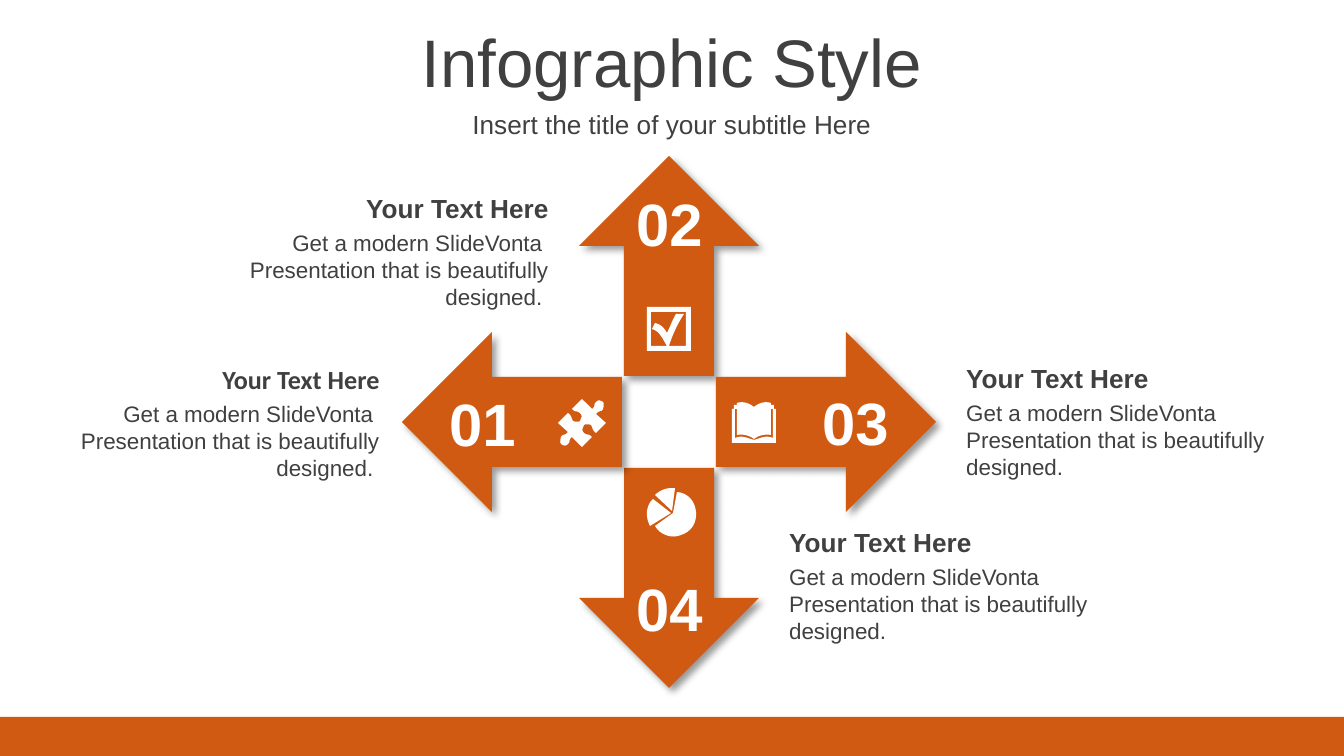
from pptx import Presentation
from pptx.dml.color import RGBColor
from pptx.enum.shapes import MSO_SHAPE
from pptx.enum.text import MSO_ANCHOR, PP_ALIGN
from pptx.oxml import parse_xml
from pptx.oxml.ns import nsdecls, qn
from pptx.util import Emu, Pt

SCALE = 914400 / 134.4
ORANGE, DARK, WHITE = "D15A12", "404040", "FFFFFF"
LEFT, CENTER, RIGHT = PP_ALIGN.LEFT, PP_ALIGN.CENTER, PP_ALIGN.RIGHT
SHADOW = (
    f'<a:effectLst {nsdecls("a")}><a:outerShdw blurRad="50800" dist="38100" '
    'dir="2700000" algn="tl" rotWithShape="0"><a:srgbClr val="000000">'
    '<a:alpha val="40000"/></a:srgbClr></a:outerShdw></a:effectLst>'
)


def px(n):
    return Emu(round(n * SCALE))


def rgb(color):
    return RGBColor.from_string(color)


def flip(outline, sx, sy):
    """Mirror the steps of an outline about the icon centre."""
    return [tuple(v * (sy if i % 2 else sx) for i, v in enumerate(step))
            for step in outline]


def flatten(outline, steps=8):
    """Turn (x, y) lines and six-number Bezier curves into points."""
    points = []
    for step in outline:
        if len(step) == 2:
            points.append(step)
            continue
        nodes = [points[-1], step[:2], step[2:4], step[4:]]
        for i in range(1, steps + 1):
            t = i / steps
            weights = ((1 - t) ** 3, 3 * t * (1 - t) ** 2, 3 * t * t * (1 - t), t ** 3)
            points.append(tuple(sum(w * n[axis] for w, n in zip(weights, nodes))
                                for axis in (0, 1)))
    return points


class Deck:
    font = "Arial"

    def __init__(self, width, height):
        self.prs = Presentation()
        self.prs.slide_width, self.prs.slide_height = px(width), px(height)
        self.s = self.prs.slides.add_slide(self.prs.slide_layouts[6])

    def paint(self, sp, color):
        sp.shadow.inherit = False
        sp.fill.solid()
        sp.fill.fore_color.rgb = rgb(color)
        sp.line.fill.background()

    def shape(self, kind, x, y, w, h, color):
        sp = self.s.shapes.add_shape(kind, px(x), px(y), px(w), px(h))
        self.paint(sp, color)
        return sp

    def arrow(self, cx, cy, rotation):
        w, h = 180, 220
        sp = self.shape(MSO_SHAPE.UP_ARROW, cx - w / 2, cy - h / 2, w, h, ORANGE)
        sp.rotation = rotation
        spPr = sp._element.spPr
        spPr.replace(spPr.find(qn("a:effectLst")), parse_xml(SHADOW))

    def icon(self, cx, cy, outlines):
        builder = None
        for outline in outlines:
            start, *rest = [(px(cx + x), px(cy + y)) for x, y in flatten(outline)]
            if builder is None:
                builder = self.s.shapes.build_freeform(*start, scale=1.0)
            else:
                builder.move_to(*start)
            builder.add_line_segments(rest, close=True)
        self.paint(builder.convert_to_shape(), WHITE)

    def text(self, text, x, y, w, h, size, color=DARK, align=LEFT, bold=False,
             font=None, anchor=MSO_ANCHOR.TOP, before=0):
        tf = self.s.shapes.add_textbox(px(x), px(y), px(w), px(h)).text_frame
        tf.word_wrap = True
        tf.vertical_anchor = anchor
        tf.text = text
        p = tf.paragraphs[0]
        p.alignment = align
        p.space_before = Pt(before)
        r = p.runs[0]
        r.font.name = font or self.font
        r.font.size, r.font.bold = Pt(size), bold
        r.font.color.rgb = rgb(color)


# Icon outlines, in px from the icon centre
BOOK_HALF = [
    [(0, -16), (-5, -20, -11, -22, -17, -20), (-17, -18), (-20, -18),
     (-20, -14), (-22, -14), (-22, 20), (0, 20)],
    [(-19, -14), (-17, -14), (-17, 12), (-12, 11, -5, 12, 0, 16),
     (0, 17), (-7, 15, -12, 12, -19, 15)],
]
BOOK = BOOK_HALF + [flip(outline, -1, 1) for outline in BOOK_HALF]

PUZZLE_HALF = [
    (21, -21), (22, -20, 22, -17, 21, -14), (20, -11, 17, -13, 14, -9),
    (24, 0), (14, 10), (10, 7, 11, 5, 9, 2), (7, 1, 3, 1, 2, 2),
    (1, 5, -1, 7, 2, 10), (6, 13, 6, 10, 10, 14), (0, 24), (-10, 14),
    (-14, 17, -11, 18, -14, 21), (-17, 24, -19, 22, -21, 21),
]
PUZZLE = [PUZZLE_HALF + flip(PUZZLE_HALF, -1, -1)]

PIE = [
    [(-19, -13), (-1, 1), (-22, 14), (-27, 5, -26, -7, -19, -13)],
    [(5, -20), (16, -19, 23, -11, 24, 0), (25, 11, 19, 20, 9, 23),
     (0, 27, -12, 23, -17, 14), (1, 1)],
    [(0, -24), (3, -24), (0, -1), (-17, -17), (-13, -21, -7, -24, 0, -24)],
]
CHECKBOX = [
    [(-22, -22), (22, -22), (22, 22), (-22, 22)],
    [(-18, -17), (-18, 17), (-2, 17), (-6, 11, -9, 2, -17, 0), (-14, -6),
     (-7, -4, -5, -1, -2, 4), (2, -4, 3, -8, 7, -15), (15, -15),
     (9, -6, 3, 7, 0, 17), (17, 17), (17, -17)],
]

HEADING = "Your Text Here"
BODY = "Get a modern SlideVonta  Presentation that is beautifully designed."


def main():
    deck = Deck(1344, 756)

    # Footer band and titles
    deck.shape(MSO_SHAPE.RECTANGLE, 0, 717, 1344, 39, ORANGE)
    for text, y, h, size in (("Infographic Style", 18, 85, 36),
                             ("Insert the title of your subtitle Here", 103, 42, 14)):
        deck.text(text, 0, y, 1344, h, size, align=CENTER,
                  anchor=MSO_ANCHOR.MIDDLE, before=size * 0.2)

    # Arrows pointing out from the centre of the cross
    cx, cy = 669, 422
    for i, (dx, dy) in enumerate([(0, -156), (157, 0), (0, 156), (-157, 0)]):
        deck.arrow(cx + dx, cy + dy, 90 * i)

    # Numbers
    for number, x, y in (("01", 482, 423), ("02", 669, 223),
                         ("03", 855, 422), ("04", 669, 608)):
        deck.text(number, x - 62, y - 43, 125, 86, 32, WHITE, CENTER, True,
                  anchor=MSO_ANCHOR.MIDDLE)

    # Icons
    for x, y, outlines in ((754, 423, BOOK), (582, 423, PUZZLE),
                           (672, 512, PIE), (669, 329, CHECKBOX)):
        deck.icon(x, y, outlines)

    # Captions
    for x, y, align, font in ((776, 520, LEFT, "Arial"), (953, 356, LEFT, "Arial"),
                              (26, 357, RIGHT, "Calibri"), (195, 186, RIGHT, "Arial")):
        body = BODY + " " if align == RIGHT else BODY
        deck.text(HEADING, x, y, 367, 46, 14, align=align, bold=True, font=font)
        deck.text(body, x, y + 37, 367, 95, 12, align=align)

    deck.prs.save("out.pptx")


if __name__ == "__main__":
    main()
